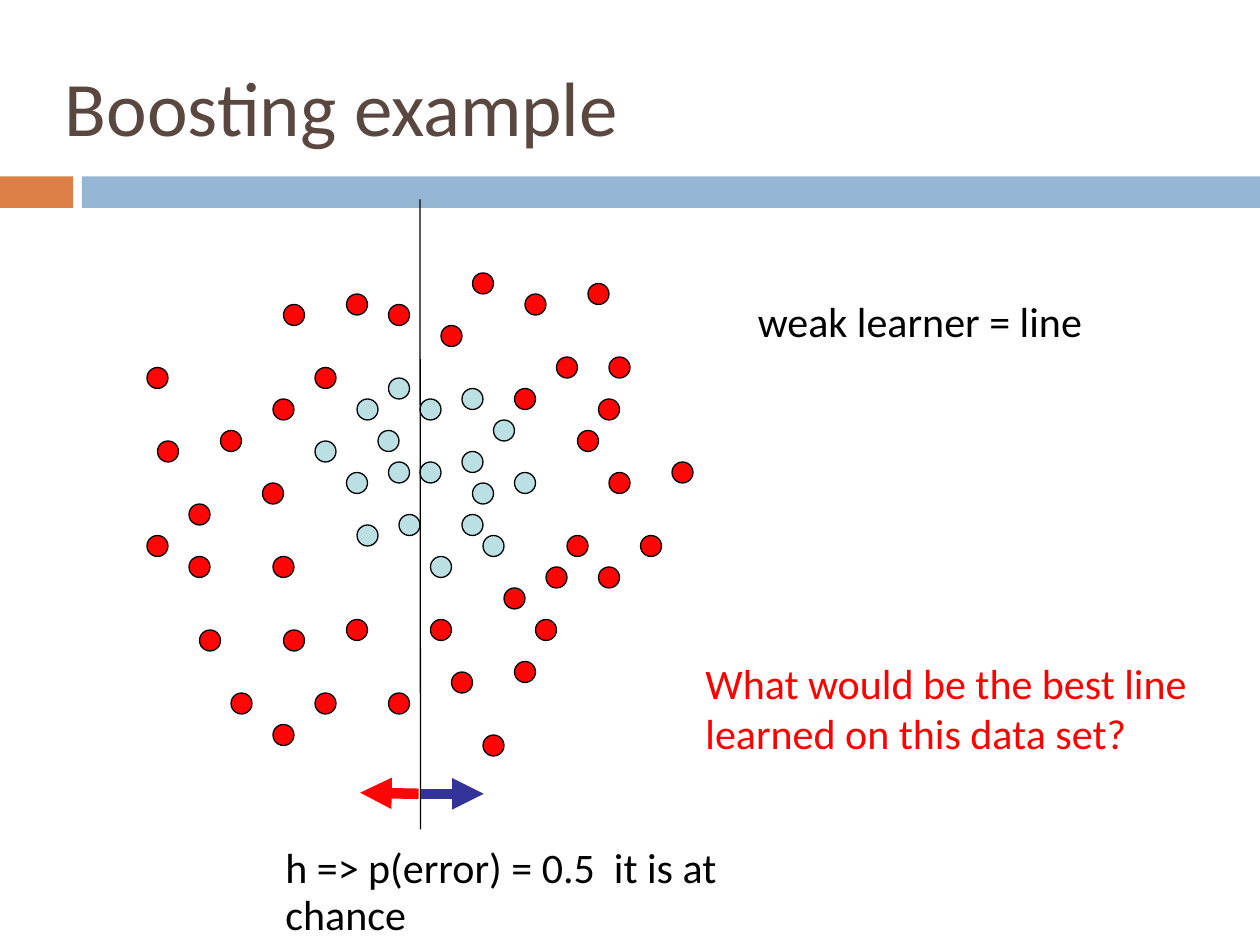
from dataclasses import dataclass

import pptx
import pptx.dml.color
import pptx.enum.shapes
import pptx.enum.text
import pptx.oxml.ns
import pptx.slide
import pptx.util
from lxml import etree

COLOURS = {
    "orange": "DD8047",
    "band": "94B6D2",
    "title": "594740",
    "pale": "BBE0E3",
    "red": "FE0606",
    "question": "FF0000",
    "navy": "333399",
    "black": "000000",
}
FONT = "Calibri"
GRID = 6
DOT_SIZE = 12


@dataclass(frozen=True)
class Box:
    left: float
    top: float
    width: float
    height: float

    def lengths(self) -> list[int]:
        return [pptx.util.Pt(v) for v in (self.left, self.top, self.width, self.height)]


@dataclass(frozen=True)
class Line:
    start: tuple[float, float]
    end: tuple[float, float]
    colour: str
    weight: float
    arrow: bool = False


BANDS = [
    (Box(0, 100.8, 41.8, 18), "orange"),
    (Box(46.8, 100.8, 673.2, 18), "band"),
]

DOTS = {
    "pale": [
        (40, 38), (44, 37), (47, 40), (37, 44), (44, 49), (49, 45),
        (34, 50), (40, 44), (44, 43), (45, 46), (38, 49), (33, 45),
        (34, 38), (41, 53), (36, 41), (46, 51), (30, 42), (37, 36),
    ],
    "red": [
        (58, 45), (57, 38), (54, 51), (57, 54), (64, 44), (61, 51),
        (15, 42), (14, 35), (14, 51), (21, 41), (18, 48), (27, 60),
        (26, 53), (26, 69), (33, 59), (30, 66), (43, 64), (41, 59),
        (37, 66), (49, 63), (46, 70), (27, 29), (37, 29), (26, 38),
        (33, 28), (30, 35), (50, 28), (42, 31), (49, 37), (56, 27),
        (53, 34), (19, 60), (18, 53), (25, 46), (22, 66), (45, 26),
        (58, 34), (55, 41), (48, 56), (51, 59), (52, 54),
    ],
}

LINES = [
    Line((240, 114), (240.3, 474), "black", 0.75),
    Line((239.2, 453.6), (205.8, 453), "red", 6, arrow=True),
    Line((240.4, 453.6), (276.4, 453.6), "navy", 6, arrow=True),
]


def rgb(colour: str) -> pptx.dml.color.RGBColor:
    return pptx.dml.color.RGBColor.from_string(COLOURS[colour])


def add_filled(
    page: pptx.slide.Slide,
    kind: pptx.enum.shapes.MSO_SHAPE,
    box: Box,
    fill: str,
    outline: str | None = None,
) -> None:
    shape = page.shapes.add_shape(kind, *box.lengths())
    shape.shadow.inherit = False
    shape.fill.solid()
    shape.fill.fore_color.rgb = rgb(fill)
    if outline:
        shape.line.color.rgb = rgb(outline)
        shape.line.width = pptx.util.Pt(0.75)
    else:
        shape.line.fill.background()


def add_line(page: pptx.slide.Slide, line: Line) -> None:
    ends = [pptx.util.Pt(v) for v in (*line.start, *line.end)]
    connector = page.shapes.add_connector(
        pptx.enum.shapes.MSO_CONNECTOR.STRAIGHT, *ends
    )
    connector.line.color.rgb = rgb(line.colour)
    connector.line.width = pptx.util.Pt(line.weight)
    properties = connector.element.spPr
    if line.arrow:
        outline = properties.find(pptx.oxml.ns.qn("a:ln"))
        etree.SubElement(outline, pptx.oxml.ns.qn("a:tailEnd"), type="triangle")
    etree.SubElement(properties, pptx.oxml.ns.qn("a:effectLst"))


def add_text(
    page: pptx.slide.Slide,
    text: str,
    *,
    box: Box,
    size: float = 24,
    colour: str = "black",
    spacing: float = 1.0,
    wrap: bool = True,
    anchor: pptx.enum.text.MSO_ANCHOR = pptx.enum.text.MSO_ANCHOR.TOP,
) -> None:
    frame = page.shapes.add_textbox(*box.lengths()).text_frame
    frame.word_wrap = wrap
    frame.vertical_anchor = anchor
    para = frame.paragraphs[0]
    para.line_spacing = spacing
    span = para.add_run()
    span.text = text
    span.font.name = FONT
    span.font.size = pptx.util.Pt(size)
    span.font.color.rgb = rgb(colour)


def main() -> None:
    deck = pptx.Presentation()
    deck.slide_width = pptx.util.Pt(720)
    deck.slide_height = pptx.util.Pt(540)
    page = deck.slides.add_slide(deck.slide_layouts[6])

    for box, fill in BANDS:
        add_filled(page, pptx.enum.shapes.MSO_SHAPE.RECTANGLE, box, fill)
    add_text(
        page,
        "Boosting example",
        box=Box(30, 18, 648, 90),
        size=44,
        colour="title",
        spacing=0.93,
        anchor=pptx.enum.text.MSO_ANCHOR.MIDDLE,
    )
    for fill, places in DOTS.items():
        for column, row in places:
            box = Box(column * GRID, row * GRID, DOT_SIZE, DOT_SIZE)
            add_filled(page, pptx.enum.shapes.MSO_SHAPE.OVAL, box, fill, "black")
    for line in LINES:
        add_line(page, line)

    add_text(
        page,
        "h => p(error) = 0.5  it is at chance",
        box=Box(156, 480, 281, 29),
        spacing=0.93,
    )
    add_text(
        page, "weak learner = line", box=Box(426, 165.6, 206.6, 36), wrap=False
    )
    add_text(
        page,
        "What would be the best line learned on this data set?",
        box=Box(396, 372, 300, 65.5),
        colour="question",
    )
    deck.save("out.pptx")


if __name__ == "__main__":
    main()
